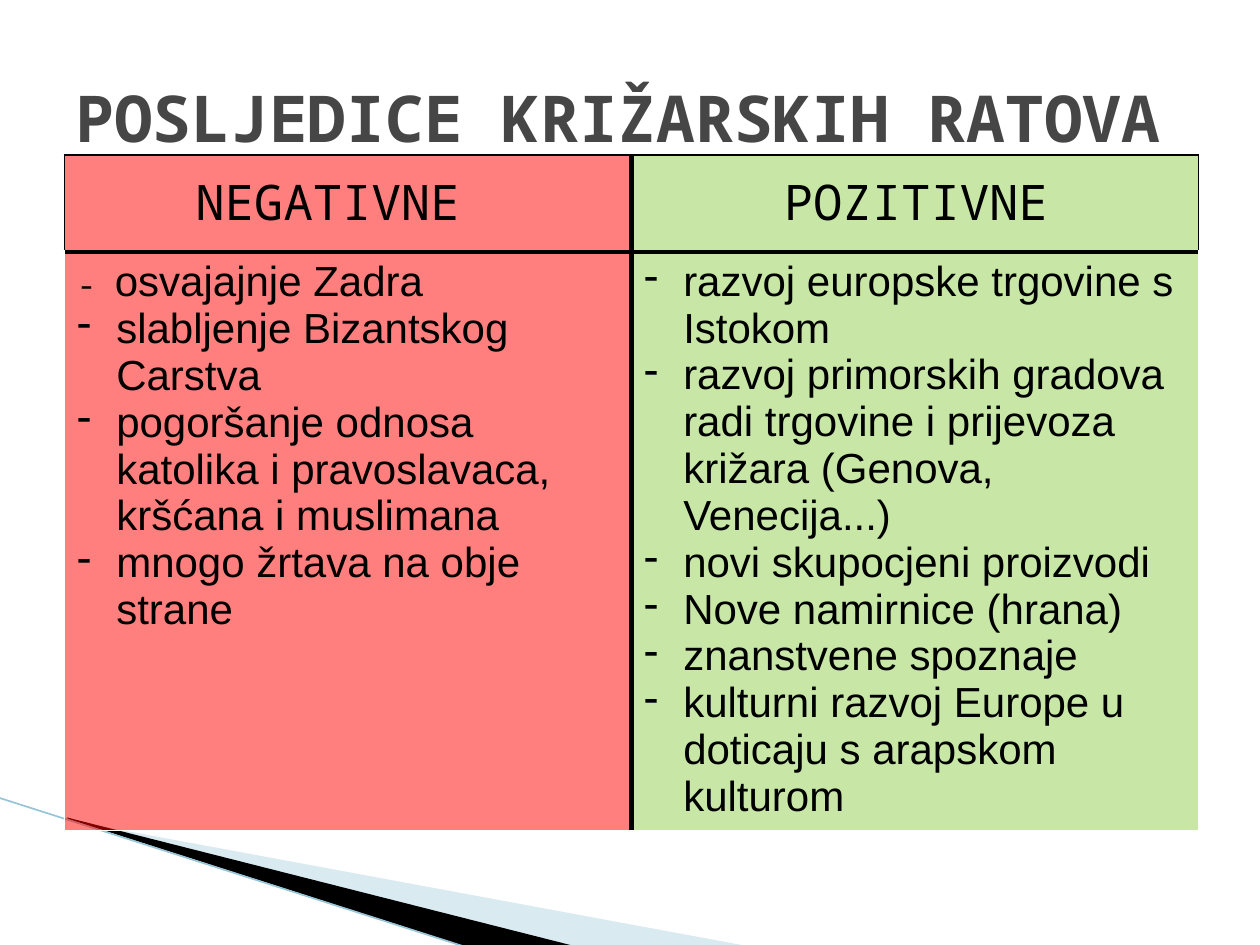
from lxml import etree
from pptx import Presentation
from pptx.dml.color import RGBColor
from pptx.enum.text import MSO_ANCHOR, PP_ALIGN
from pptx.oxml.ns import qn
from pptx.util import Cm, Pt

MIDDLE, TOP = MSO_ANCHOR.MIDDLE, MSO_ANCHOR.TOP
LEFT, CENTER = PP_ALIGN.LEFT, PP_ALIGN.CENTER
MONO, SANS = "Noto Sans Mono", "Arial"
COLORS = {"black": "000000", "white": "FFFFFF", "title": "464646", "red": "FF0000",
          "green": "92D050", "pale": "A0CBDC", "edge": "97C5D8"}

TITLE = "POSLJEDICE KRIŽARSKIH RATOVA"
SIDES = [
    {"head": "NEGATIVNE", "color": "red", "left": 2.11, "first": "osvajajnje Zadra",
     "points": ["slabljenje Bizantskog Carstva",
                "pogoršanje odnosa katolika i pravoslavaca, kršćana i muslimana",
                "mnogo žrtava na obje strane"]},
    {"head": "POZITIVNE", "color": "green", "left": 13.97, "first": None,
     "points": ["razvoj europske trgovine s Istokom",
                "razvoj primorskih gradova radi trgovine i prijevoza križara (Genova, Venecija...)",
                "novi skupocjeni proizvodi",
                "Nove namirnice (hrana)",
                "znanstvene spoznaje",
                "kulturni razvoj Europe u doticaju s arapskom kulturom"]},
]
ROWS = [1.96, 11.66]
COL = 11.43
THIN, THICK = 1, 3
WEDGES = [
    ("pale", 40, [(1.4, 16.54), (15.11, 19.08), (11.58, 19.08), (1.4, 16.51)]),
    ("black", 100, [(1.35, 16.48), (11.61, 19.08), (9.45, 19.1), (1.37, 16.51)]),
]


def rgb(name):
    return RGBColor.from_string(COLORS[name])


def paint(fill, root, name, alpha=100):
    """Fill with a colour; root is the XML element that holds the fill."""
    fill.solid()
    fill.fore_color.rgb = rgb(name)
    if alpha < 100:
        tone = root.find(qn("a:solidFill")).find(qn("a:srgbClr"))
        etree.SubElement(tone, qn("a:alpha")).set("val", str(alpha * 1000))


def write(par, text, size=24, font=SANS, color="black", bold=False, align=LEFT):
    par.alignment = align
    run = par.add_run()
    run.text = text
    run.font.size, run.font.name, run.font.bold = Pt(size), font, bold
    run.font.color.rgb = rgb(color)


def box(left, top, width, height, text, anchor=TOP, **style):
    frame = slide.shapes.add_textbox(Cm(left), Cm(top), Cm(width), Cm(height)).text_frame
    frame.word_wrap = True
    frame.vertical_anchor = anchor
    write(frame.paragraphs[0], text, **style)


def dash(par):
    props = par._p.get_or_add_pPr()
    props.set("marL", str(Cm(0.79)))
    props.set("indent", str(Cm(-0.79)))
    etree.SubElement(props, qn("a:buFontTx"))
    etree.SubElement(props, qn("a:buChar")).set("char", "-")


def border(cell, row, col):
    """Thick black lines inside, thin ones outside, white around the lower row."""
    outer = ("white" if row else "black", THIN)
    inner = ("black", THICK)
    edges = {"lnL": inner if col else outer, "lnR": outer if col else inner,
             "lnT": inner if row else outer, "lnB": outer if row else inner}
    props = cell._tc.get_or_add_tcPr()
    for spot, (tag, (color, width)) in enumerate(edges.items()):
        line = etree.Element(qn("a:" + tag), w=str(Pt(width)))
        fill = etree.SubElement(line, qn("a:solidFill"))
        etree.SubElement(fill, qn("a:srgbClr")).set("val", COLORS[color])
        props.insert(spot, line)


deck = Presentation()
deck.slide_width, deck.slide_height = Cm(25.4), Cm(19.05)
slide = deck.slides.add_slide(deck.slide_layouts[6])

for color, alpha, spots in WEDGES:
    spots = [(Cm(x), Cm(y)) for x, y in spots]
    pen = slide.shapes.build_freeform(*spots[0])
    pen.add_line_segments(spots[1:], close=True)
    wedge = pen.convert_to_shape()
    wedge.shadow.inherit = False
    wedge.line.fill.background()
    paint(wedge.fill, wedge._element.spPr, color, alpha)

edge = slide.shapes.add_connector(1, Cm(-0.03), Cm(16.08), Cm(9.42), Cm(19.1))
edge.line.color.rgb = rgb("edge")
edge.line.width = Pt(0.95)
etree.SubElement(edge._element.spPr, qn("a:effectLst"))

table = slide.shapes.add_table(len(ROWS), len(SIDES), Cm(1.3), Cm(3.12),
                               Cm(COL * len(SIDES)), Cm(sum(ROWS))).table
table.first_row = table.horz_banding = False
for row, high in enumerate(ROWS):
    table.rows[row].height = Cm(high)
    for col, side in enumerate(SIDES):
        table.columns[col].width = Cm(COL)
        cell = table.cell(row, col)
        paint(cell.fill, cell._tc.get_or_add_tcPr(), side["color"], 50)
        border(cell, row, col)

for col, side in enumerate(SIDES):
    frame = table.cell(1, col).text_frame
    par = frame.paragraphs[0]
    if side["first"]:
        write(par, "- ", size=18, font=MONO)
        write(par, side["first"])
        par = frame.add_paragraph()
    for num, point in enumerate(side["points"]):
        par = frame.add_paragraph() if num else par
        dash(par)
        write(par, point)

box(1.27, 0.76, 22.86, 3.18, TITLE, anchor=MIDDLE, size=36.9, font=MONO,
    color="title", bold=True)
for side in SIDES:
    box(side["left"], 3.33, 8.99, 1.45, side["head"], size=28, font=MONO, align=CENTER)

deck.save("out.pptx")
